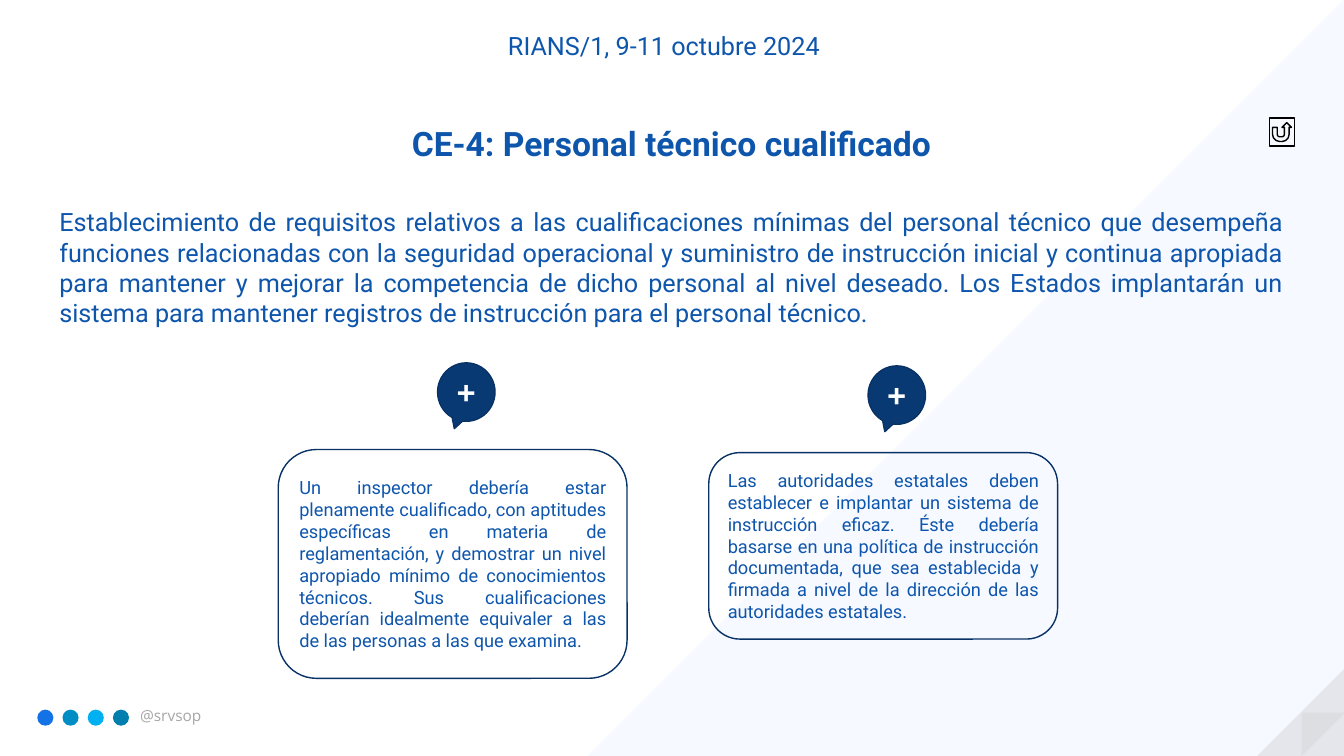
from pptx import Presentation
from pptx.dml.color import RGBColor
from pptx.enum.shapes import MSO_SHAPE as Shape
from pptx.enum.text import MSO_ANCHOR as Anchor, MSO_AUTO_SIZE as AutoSize, PP_ALIGN as Align
from pptx.oxml.ns import qn
from pptx.util import Inches, Pt
from lxml import etree

BLUE = RGBColor(0x0E, 0x55, 0xAC)
NAVY = RGBColor(0x09, 0x39, 0x73)
OUTLINE = RGBColor(0x08, 0x32, 0x65)
PALE = RGBColor(0xF6, 0xF9, 0xFF)
GRAY = RGBColor(0xA6, 0xA6, 0xA6)
SILVER = RGBColor(0xBF, 0xBF, 0xBF)
WHITE = RGBColor(0xFF, 0xFF, 0xFF)
BLACK = RGBColor(0, 0, 0)
SOCIAL_COLORS = [
    RGBColor(0x13, 0x72, 0xE6),
    RGBColor(0x00, 0x8D, 0xC3),
    RGBColor(0x00, 0xB0, 0xF0),
    RGBColor(0x00, 0x7E, 0xAE),
]

EVENT = "RIANS/1, 9-11 octubre 2024"
TITLE = "CE-4: Personal técnico cualificado"
HANDLE = "@srvsop"
SUMMARY = (
    "Establecimiento de requisitos relativos a las cualificaciones mínimas del personal técnico "
    "que desempeña funciones relacionadas con la seguridad operacional y suministro de instrucción "
    "inicial y continua apropiada para mantener y mejorar la competencia de dicho personal al nivel "
    "deseado. Los Estados implantarán un sistema para mantener registros de instrucción para el "
    "personal técnico."
)
CARDS = [
    (7.03, 4.49, 1.85,
     "Las autoridades estatales deben establecer e implantar un sistema de instrucción eficaz. "
     "Éste debería basarse en una política de instrucción documentada, que sea establecida y "
     "firmada a nivel de la dirección de las autoridades estatales."),
    (2.76, 4.46, 2.27,
     "Un inspector debería estar plenamente cualificado, con aptitudes específicas en materia de "
     "reglamentación, y demostrar un nivel apropiado mínimo de conocimientos técnicos. Sus "
     "cualificaciones deberían idealmente equivaler a las de las personas a las que examina."),
]
TRIANGLES = [
    (5.83, 0, 7.5, "flipH", PALE, 100),
    (12.47, 6.64, 0.86, "flipH", GRAY, 22),
    (12.91, 7.07, 0.43, "flipV", SILVER, 20),
]


def write(box, text, size=18, color=BLUE, font="Roboto", bold=False,
          align=Align.LEFT, anchor=Anchor.TOP):
    """Fill a shape with one formatted paragraph."""
    frame = box.text_frame
    frame.word_wrap = True
    frame.auto_size = AutoSize.NONE
    frame.vertical_anchor = anchor
    para = frame.paragraphs[0]
    para.alignment = align
    span = para.add_run()
    span.text = text
    span.font.name = font
    span.font.size = Pt(size)
    span.font.bold = bold
    span.font.color.rgb = color


def add_text(page, place, text, **style):
    """Add a text box at the given place in inches."""
    write(page.shapes.add_textbox(*map(Inches, place)), text, **style)


def draw(page, kind, place, fill=None, line=None):
    """Add a preset shape with a plain fill and outline."""
    shape = page.shapes.add_shape(kind, *map(Inches, place))
    shape.shadow.inherit = False
    if fill is None:
        shape.fill.background()
    else:
        shape.fill.solid()
        shape.fill.fore_color.rgb = fill
    if line is None:
        shape.line.fill.background()
    else:
        shape.line.color.rgb = line
        shape.line.width = Pt(1)
    return shape


def add_triangle(page, left, top, side, flip, color, opacity):
    """Add a flipped right triangle with the given opacity in percent."""
    triangle = draw(page, Shape.RIGHT_TRIANGLE, (left, top, side, side), fill=color)
    properties = triangle.element.spPr
    properties.find(qn("a:xfrm")).set(flip, "1")
    if opacity < 100:
        tint = properties.find(qn("a:solidFill")).find(qn("a:srgbClr"))
        etree.SubElement(tint, qn("a:alpha")).set("val", str(opacity * 1000))


def add_card(page, left, top, height, text):
    """Add a rounded card with its plus callout above."""
    callout = draw(page, Shape.OVAL_CALLOUT, (left + 1.58, top - 0.86, 0.57, 0.58),
                   fill=NAVY, line=OUTLINE)
    frame = callout.text_frame
    frame.margin_left = frame.margin_right = frame.margin_top = frame.margin_bottom = 0
    write(callout, "+", size=24, color=WHITE, font="Open Sans", bold=True,
          align=Align.CENTER, anchor=Anchor.MIDDLE)
    card = draw(page, Shape.ROUNDED_RECTANGLE, (left, top, 3.46, height), line=OUTLINE)
    write(card, text, size=13, align=Align.JUSTIFY, anchor=Anchor.MIDDLE)


def main():
    """Build the slide and save it."""
    deck = Presentation()
    deck.slide_width, deck.slide_height = Inches(13.33), Inches(7.5)
    page = deck.slides.add_slide(deck.slide_layouts[5])

    for triangle in TRIANGLES:
        add_triangle(page, *triangle)
    for index, color in enumerate(SOCIAL_COLORS):
        draw(page, Shape.OVAL, (0.37 + index * 0.25, 7.04, 0.16, 0.16), fill=color)
    add_text(page, (1.29, 6.96, 1.49, 0.29), HANDLE, size=11, color=GRAY, font="Open Sans")
    add_text(page, (3.59, 0.25, 5.99, 0.4), EVENT, align=Align.CENTER)

    title = page.shapes.title
    title.left, title.top, title.width, title.height = map(Inches, (1.01, 1.17, 11.3, 0.5))
    write(title, TITLE, size=24, bold=True, align=Align.CENTER)
    add_text(page, (0.49, 2, 12.34, 1.31), SUMMARY, align=Align.JUSTIFY)

    for card in CARDS:
        add_card(page, *card)
    draw(page, Shape.ACTION_BUTTON_RETURN, (12.59, 1.17, 0.25, 0.28), line=BLACK)
    deck.save("out.pptx")


if __name__ == "__main__":
    main()
